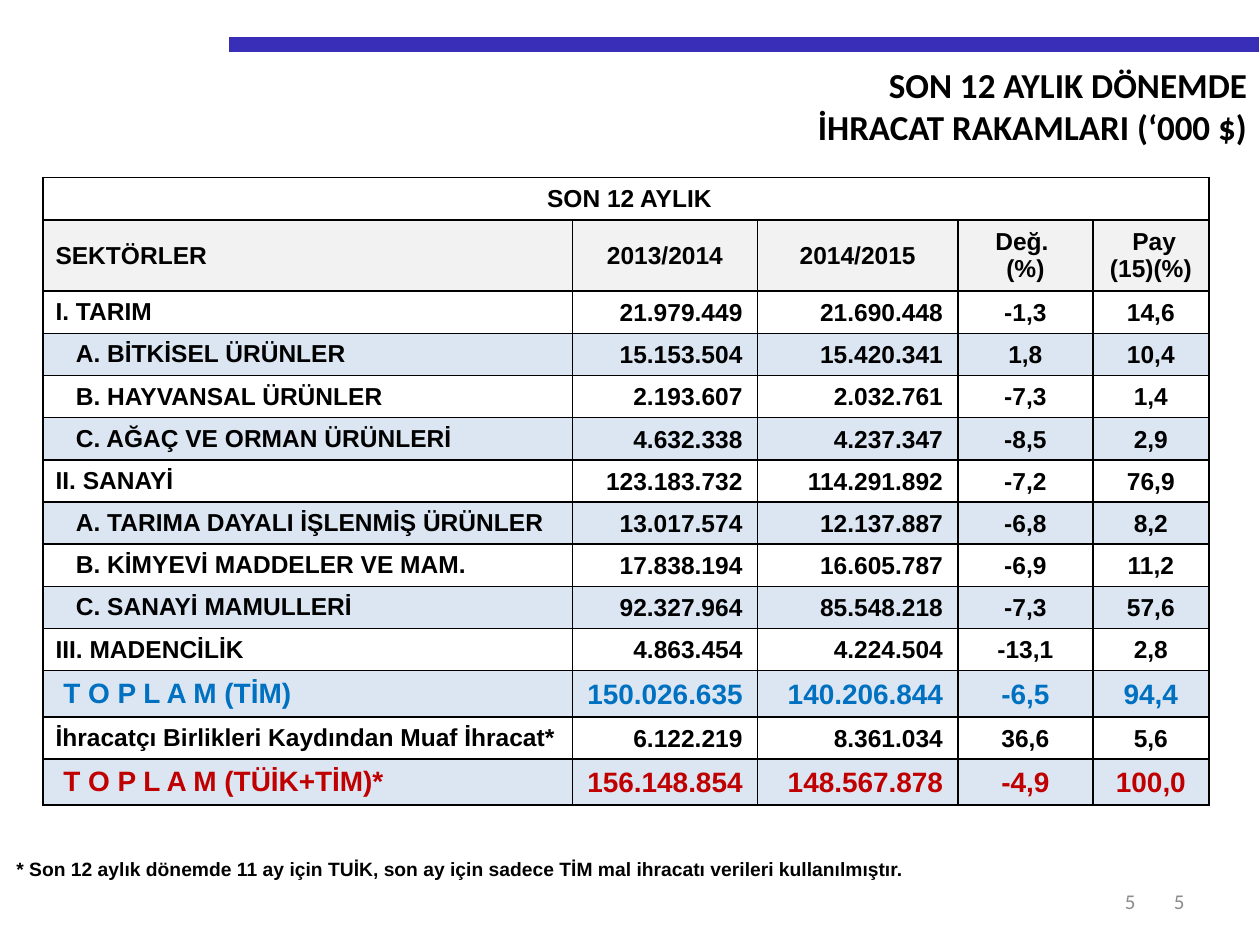
from dataclasses import dataclass

from lxml import etree
from pptx import Presentation
from pptx import util as u
from pptx.dml import color
from pptx.enum import shapes, text
from pptx.oxml import ns

Cm, Pt = u.Cm, u.Pt
LEFT, MID, RIGHT = text.PP_ALIGN.LEFT, text.PP_ALIGN.CENTER, text.PP_ALIGN.RIGHT


@dataclass(frozen=True)
class Theme:
    head: str = "Calibri"
    body: str = "Arial"
    black: str = "000000"
    grey: str = "8C8C8C"
    bar: str = "382EB8"
    shade: str = "F2F2F2"
    band: str = "DCE6F2"
    blue: str = "0070C0"
    red: str = "C00000"
    title: int = 20
    total: int = 16
    cell: int = 14
    page: int = 12
    note: int = 11


T = Theme()

WIDTHS = (10.67, 3.73, 4.04, 2.72, 2.34)
ALIGNS = (LEFT, RIGHT, RIGHT, MID, MID)
RIGHTS = (0, 0.3, 0.3, 0.03, 0.03)
HEADS = ("SEKTÖRLER", "2013/2014", "2014/2015", "Değ. \n(%)", " Pay\n(15)(%)")

# Row kind: left margin, size, colour, height
KINDS = {
    "main": (0.25, T.cell, T.black, 0.85),
    "sub": (0.66, T.cell, T.black, 0.85),
    "tim": (0.25, T.total, T.blue, 0.93),
    "all": (0.25, T.total, T.red, 0.93),
}
ROWS = (
    ("main", "I. TARIM", "21.979.449", "21.690.448", "-1,3", "14,6"),
    ("sub", "A. BİTKİSEL ÜRÜNLER", "15.153.504", "15.420.341", "1,8", "10,4"),
    ("sub", "B. HAYVANSAL ÜRÜNLER", "2.193.607", "2.032.761", "-7,3", "1,4"),
    ("sub", "C. AĞAÇ VE ORMAN ÜRÜNLERİ", "4.632.338", "4.237.347", "-8,5", "2,9"),
    ("main", "II. SANAYİ", "123.183.732", "114.291.892", "-7,2", "76,9"),
    ("sub", "A. TARIMA DAYALI İŞLENMİŞ ÜRÜNLER", "13.017.574", "12.137.887", "-6,8", "8,2"),
    ("sub", "B. KİMYEVİ MADDELER VE MAM.", "17.838.194", "16.605.787", "-6,9", "11,2"),
    ("sub", "C. SANAYİ MAMULLERİ", "92.327.964", "85.548.218", "-7,3", "57,6"),
    ("main", "III. MADENCİLİK", "4.863.454", "4.224.504", "-13,1", "2,8"),
    ("tim", " T O P L A M (TİM)", "150.026.635", "140.206.844", "-6,5", "94,4"),
    ("main", "İhracatçı Birlikleri Kaydından Muaf İhracat*",
     "6.122.219", "8.361.034", "36,6", "5,6"),
    ("all", " T O P L A M (TÜİK+TİM)*", "156.148.854", "148.567.878", "-4,9", "100,0"),
)
NOTE = ("* Son 12 aylık dönemde 11 ay için TUİK, son ay için sadece "
        "TİM mal ihracatı verileri kullanılmıştır.")


def rgb(code):
    return color.RGBColor.from_string(code)


def write(frame, words, face, size, tint, align, bold=True):
    frame.text = words
    frame.word_wrap = True
    for para in frame.paragraphs:
        para.alignment = align
        for run in para.runs:
            font = run.font
            font.name, font.size, font.bold = face, Pt(size), bold
            font.color.rgb = rgb(tint)


def border(cell):
    """Draw a thin black line on all four sides of the cell."""
    props = cell._tc.get_or_add_tcPr()
    for spot, side in enumerate(("lnL", "lnR", "lnT", "lnB")):
        line = etree.Element(ns.qn("a:" + side), w=str(Pt(1)))
        fill = etree.SubElement(line, ns.qn("a:solidFill"))
        etree.SubElement(fill, ns.qn("a:srgbClr"), val=T.black)
        props.insert(spot, line)


def fill_cell(cell, words, size, align, tint=T.black, back=None,
              left=0.25, right=0.25, top=0.13, base=0.13):
    cell.margin_left, cell.margin_right = Cm(left), Cm(right)
    cell.margin_top, cell.margin_bottom = Cm(top), Cm(base)
    cell.vertical_anchor = text.MSO_ANCHOR.MIDDLE
    write(cell.text_frame, words, T.body, size, tint, align)
    if back:
        cell.fill.solid()
        cell.fill.fore_color.rgb = rgb(back)
    else:
        cell.fill.background()


def add_grid(slide, left, top, widths, heights):
    frame = slide.shapes.add_table(len(heights), len(widths), Cm(left), Cm(top),
                                   Cm(sum(widths)), Cm(sum(heights)))
    grid = frame.table
    grid.first_row = grid.horz_banding = False
    for col, width in zip(grid.columns, widths):
        col.width = Cm(width)
    for row, height in zip(grid.rows, heights):
        row.height = Cm(height)
    return grid


def add_sums(slide):
    """Add the table of exports by sector."""
    heights = [0.85, 1.44] + [KINDS[row[0]][3] for row in ROWS]
    grid = add_grid(slide, 0.87, 3.58, WIDTHS, heights)
    grid.cell(0, 0).merge(grid.cell(0, len(WIDTHS) - 1))
    fill_cell(grid.cell(0, 0), "\N{NO-BREAK SPACE}SON 12 AYLIK", T.cell, MID)
    for c, words in enumerate(HEADS):
        fill_cell(grid.cell(1, c), words, T.cell, MID if c else LEFT, back=T.shade)
    for r, (kind, *items) in enumerate(ROWS):
        left, size, tint, _ = KINDS[kind]
        for c, words in enumerate(items):
            fill_cell(grid.cell(r + 2, c), words, size, ALIGNS[c], tint,
                      T.band if r % 2 else None,
                      0.03 if c else left, RIGHTS[c], 0.03, 0 if c else 0.03)
    for cell in grid.iter_cells():
        border(cell)


def add_note(slide):
    grid = add_grid(slide, 0.3, 17.12, [18.8], [0.8, 0.8])
    for cell, words in zip(grid.iter_cells(), (NOTE, "")):
        fill_cell(cell, words, T.note, LEFT, left=0.03, right=0.03, top=0.03, base=0)


def add_bar(slide):
    bar = slide.shapes.add_connector(shapes.MSO_CONNECTOR.STRAIGHT,
                                     Cm(4.62), Cm(0.89), Cm(25.37), Cm(0.89))
    bar.line.color.rgb = rgb(T.bar)
    bar.line.width = Pt(8.5)
    etree.SubElement(bar._element.spPr, ns.qn("a:effectLst"))


def add_page(slide, left, width):
    box = slide.shapes.add_textbox(Cm(left), Cm(17.66), Cm(width), Cm(1.01))
    box.text_frame.vertical_anchor = text.MSO_ANCHOR.MIDDLE
    write(box.text_frame, "5", T.head, T.page, T.grey, RIGHT, bold=False)


def set_title(slide):
    title = slide.shapes.title
    title.left, title.top, title.width, title.height = (
        Cm(2.7), Cm(1.15), Cm(22.7), Cm(1.96))
    title.text_frame.vertical_anchor = text.MSO_ANCHOR.TOP
    write(title.text_frame, "SON 12 AYLIK DÖNEMDE\nİHRACAT RAKAMLARI (‘000 $)",
          T.head, T.title, T.black, RIGHT)


def main():
    deck = Presentation()
    deck.slide_width, deck.slide_height = Cm(25.4), Cm(19.05)
    slide = deck.slides.add_slide(deck.slide_layouts.get_by_name("Title Only"))
    add_bar(slide)
    set_title(slide)
    add_sums(slide)
    add_note(slide)
    for left, width in ((18.21, 5.92), (17.81, 5.33)):
        add_page(slide, left, width)
    deck.save("out.pptx")


if __name__ == "__main__":
    main()
